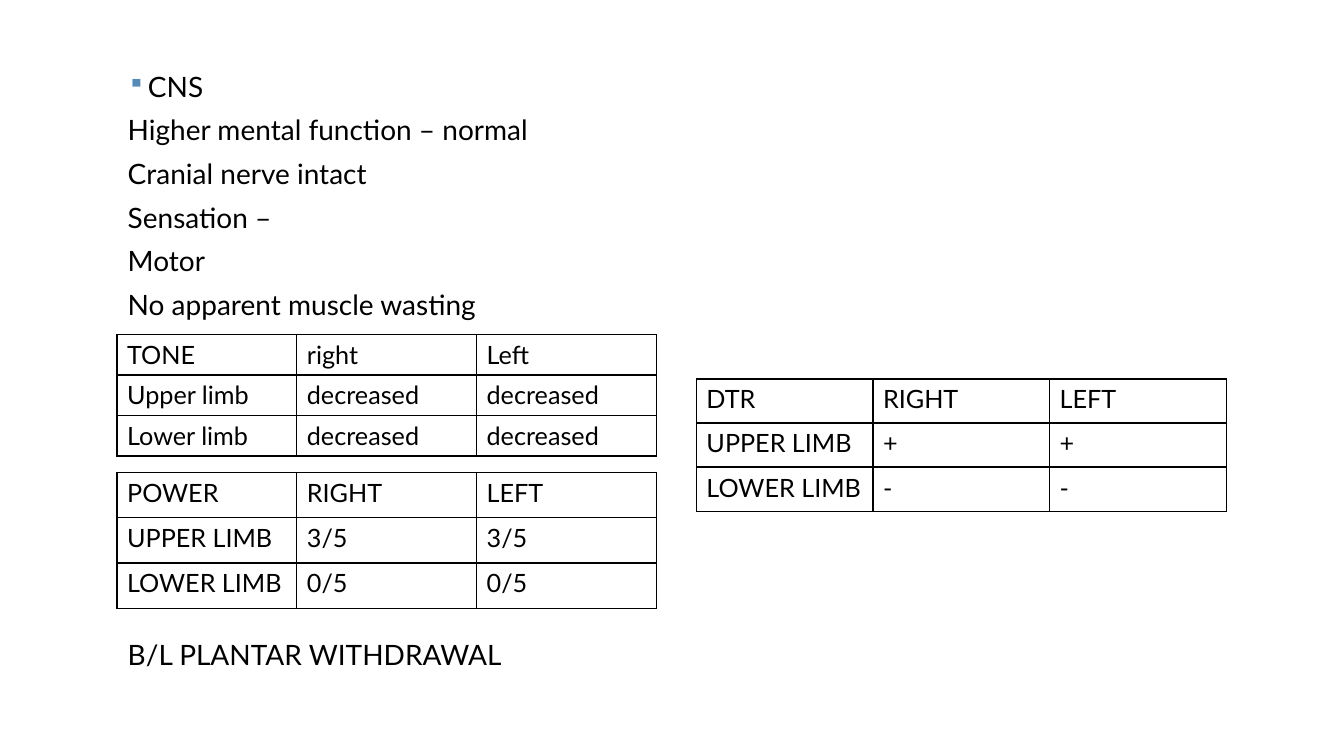
import dataclasses

import lxml.etree
import pptx
import pptx.dml.color
import pptx.oxml.ns
import pptx.util
from pptx.util import Cm, Pt


@dataclasses.dataclass(frozen=True)
class Theme:
    font: str = "Lato"
    text: str = "000000"
    border: str = "000000"
    bullet: str = "558BB8"
    body_size: int = 20
    table_size: int = 18


theme = Theme()
qn = pptx.oxml.ns.qn


def add_run(paragraph, text, size):
    run = paragraph.add_run()
    run.text = text
    run.font.name = theme.font
    run.font.size = Pt(size)
    run.font.color.rgb = pptx.dml.color.RGBColor.from_string(theme.text)


def add_border(cell):
    """Draw a 1 pt line on all four sides of a table cell."""
    properties = cell._tc.get_or_add_tcPr()
    for position, side in enumerate(("lnL", "lnR", "lnT", "lnB")):
        line = lxml.etree.Element(qn(f"a:{side}"), w=str(Pt(1)))
        fill = lxml.etree.SubElement(line, qn("a:solidFill"))
        lxml.etree.SubElement(fill, qn("a:srgbClr"), val=theme.border)
        properties.insert(position, line)


presentation = pptx.Presentation()
presentation.slide_width = Cm(33.87)
presentation.slide_height = Cm(19.05)
slide = presentation.slides.add_slide(presentation.slide_layouts[6])

# Examination findings; the wide gap leaves room for the tables
findings = [
    ("CNS", 0),
    ("Higher mental function – normal", 12),
    ("Cranial nerve intact", 12),
    ("Sensation –", 12),
    ("Motor", 12),
    ("No apparent muscle wasting", 12),
    ("B/L PLANTAR WITHDRAWAL", 230.4),
]
findings_box = slide.shapes.add_textbox(Cm(2.97), Cm(1.78), Cm(27.94), Cm(15.37))
text_frame = findings_box.text_frame
text_frame.word_wrap = True
for index, (text, space_before) in enumerate(findings):
    paragraph = text_frame.add_paragraph() if index else text_frame.paragraphs[0]
    paragraph.line_spacing = 0.8
    paragraph.space_before = Pt(space_before)
    add_run(paragraph, text, theme.body_size)

bullet_properties = text_frame.paragraphs[0]._p.get_or_add_pPr()
bullet_properties.set("marL", str(Cm(0.51)))
bullet_properties.set("indent", str(Cm(-0.51)))
bullet_color = lxml.etree.SubElement(bullet_properties, qn("a:buClr"))
lxml.etree.SubElement(bullet_color, qn("a:srgbClr"), val=theme.bullet)
lxml.etree.SubElement(bullet_properties, qn("a:buSzPct"), val="85000")
lxml.etree.SubElement(bullet_properties, qn("a:buChar"), char="▪")

# Left, top, column width and row height in centimetres, then the rows
limb_tables = [
    (2.95, 8.43, 4.53, 1.02, [
        ("TONE", "right", "Left"),
        ("Upper limb", "decreased", "decreased"),
        ("Lower limb", "decreased", "decreased"),
    ]),
    (2.95, 11.91, 4.53, 1.14, [
        ("POWER", "RIGHT", "LEFT"),
        ("UPPER LIMB", "3/5", "3/5"),
        ("LOWER LIMB", "0/5", "0/5"),
    ]),
    (17.55, 9.55, 4.45, 1.11, [
        ("DTR", "RIGHT", "LEFT"),
        ("UPPER LIMB", "+", "+"),
        ("LOWER LIMB", "-", "-"),
    ]),
]
for left, top, column_width, row_height, rows in limb_tables:
    table = slide.shapes.add_table(
        len(rows), len(rows[0]), Cm(left), Cm(top),
        Cm(column_width * len(rows[0])), Cm(row_height * len(rows)),
    ).table
    table.first_row = False
    table.horz_banding = False
    for column in table.columns:
        column.width = Cm(column_width)
    for row_index, row in enumerate(rows):
        table.rows[row_index].height = Cm(row_height)
        for column_index, text in enumerate(row):
            cell = table.cell(row_index, column_index)
            cell.fill.background()
            add_border(cell)
            add_run(cell.text_frame.paragraphs[0], text, theme.table_size)

presentation.save("out.pptx")
